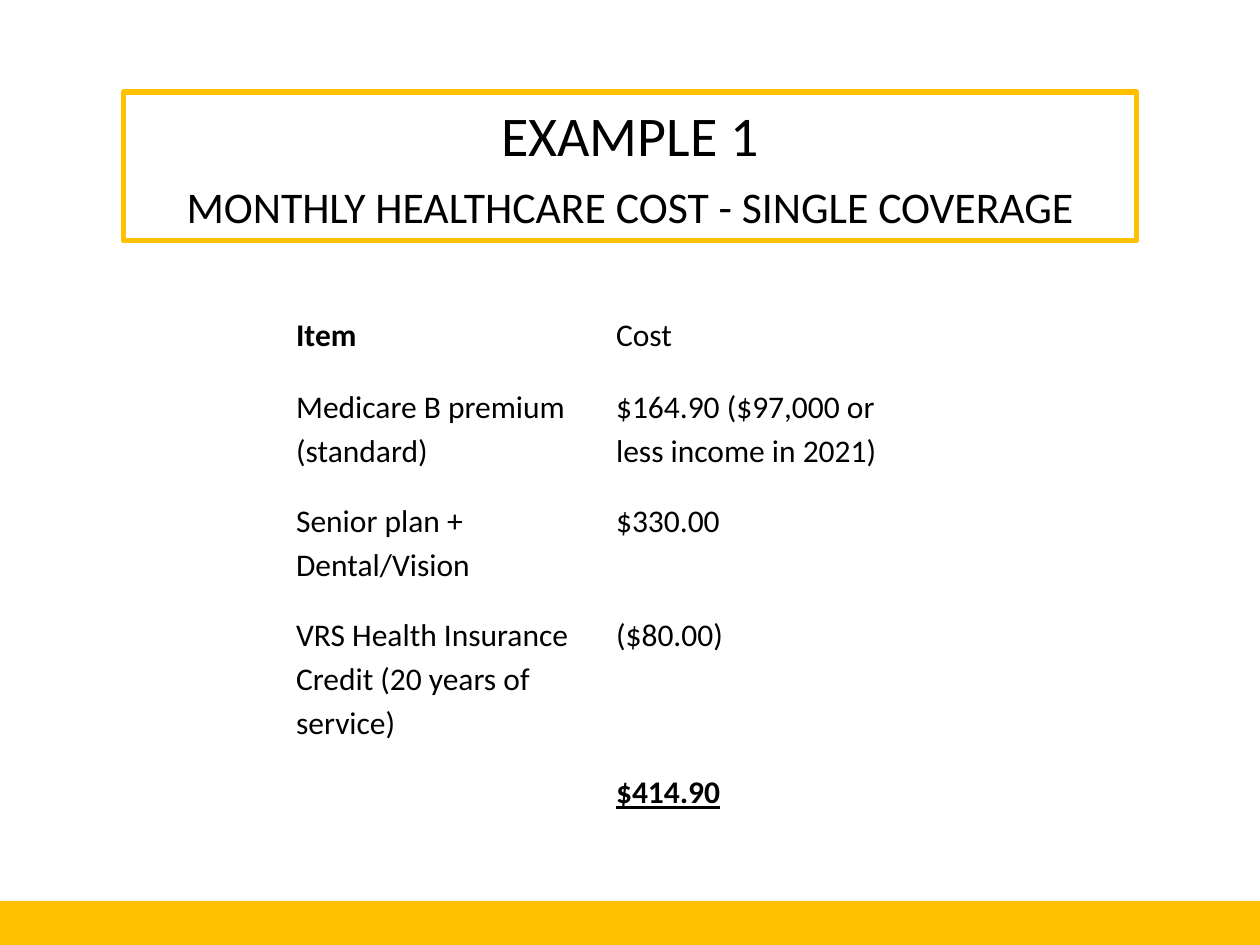
from pptx import Presentation
from pptx.dml.color import RGBColor
from pptx.enum.shapes import MSO_SHAPE
from pptx.enum.text import MSO_ANCHOR, PP_ALIGN
from pptx.util import Inches, Pt

GOLD = "FFC000"
BLACK = "000000"


def color(value):
    return RGBColor.from_string(value)


def style(para, size, bold=False, underline=False):
    for span in para.runs:
        span.font.name = "Calibri"
        span.font.size = Pt(size)
        span.font.bold = bold
        span.font.underline = underline
        span.font.color.rgb = color(BLACK)


deck = Presentation()
deck.slide_width = Inches(10)
deck.slide_height = Inches(7.5)
page = deck.slides.add_slide(deck.slide_layouts[6])

bar_height = Inches(0.35)
bar = page.shapes.add_shape(
    MSO_SHAPE.RECTANGLE, 0, deck.slide_height - bar_height, deck.slide_width, bar_height
)
bar.shadow.inherit = False
bar.fill.solid()
bar.fill.fore_color.rgb = color(GOLD)
bar.line.fill.background()

rows = [
    ("Item", "Cost"),
    ("Medicare B premium (standard)", "$164.90 ($97,000 or less income in 2021)"),
    ("Senior plan + Dental/Vision", "$330.00"),
    ("VRS Health Insurance Credit (20 years of service)", "($80.00)"),
    ("", "$414.90"),
]
row_heights = [0.53, 0.84, 0.84, 1.16, 0.53]
column_width = Inches(2.54)
table = page.shapes.add_table(
    len(rows), 2, Inches(2.25), Inches(2.41), 2 * column_width, Inches(sum(row_heights))
).table
table.first_row = False
table.horz_banding = False
for column in table.columns:
    column.width = column_width

for row_index, (texts, height) in enumerate(zip(rows, row_heights)):
    table.rows[row_index].height = Inches(height)
    for column_index, text in enumerate(texts):
        cell = table.cell(row_index, column_index)
        cell.fill.background()
        cell.margin_left = cell.margin_right = Inches(0.1)
        cell.margin_top = cell.margin_bottom = Inches(0.1)
        para = cell.text_frame.paragraphs[0]
        para.text = text
        if row_index > 0:
            para.line_spacing = 1.15
        is_total = text == "$414.90"
        style(para, 18, bold=is_total or text == "Item", underline=is_total)

title = page.shapes.add_shape(
    MSO_SHAPE.RECTANGLE, Inches(0.98), Inches(0.73), Inches(8.04), Inches(1.18)
)
title.shadow.inherit = False
title.fill.background()
title.line.color.rgb = color(GOLD)
title.line.width = Pt(3)
frame = title.text_frame
frame.word_wrap = True
frame.vertical_anchor = MSO_ANCHOR.MIDDLE
frame.text = "EXAMPLE 1\nMONTHLY HEALTHCARE COST - SINGLE COVERAGE"
for para, size in zip(frame.paragraphs, (32, 25)):
    para.alignment = PP_ALIGN.CENTER
    style(para, size)
frame.paragraphs[1].space_before = Pt(7)

deck.save("out.pptx")
